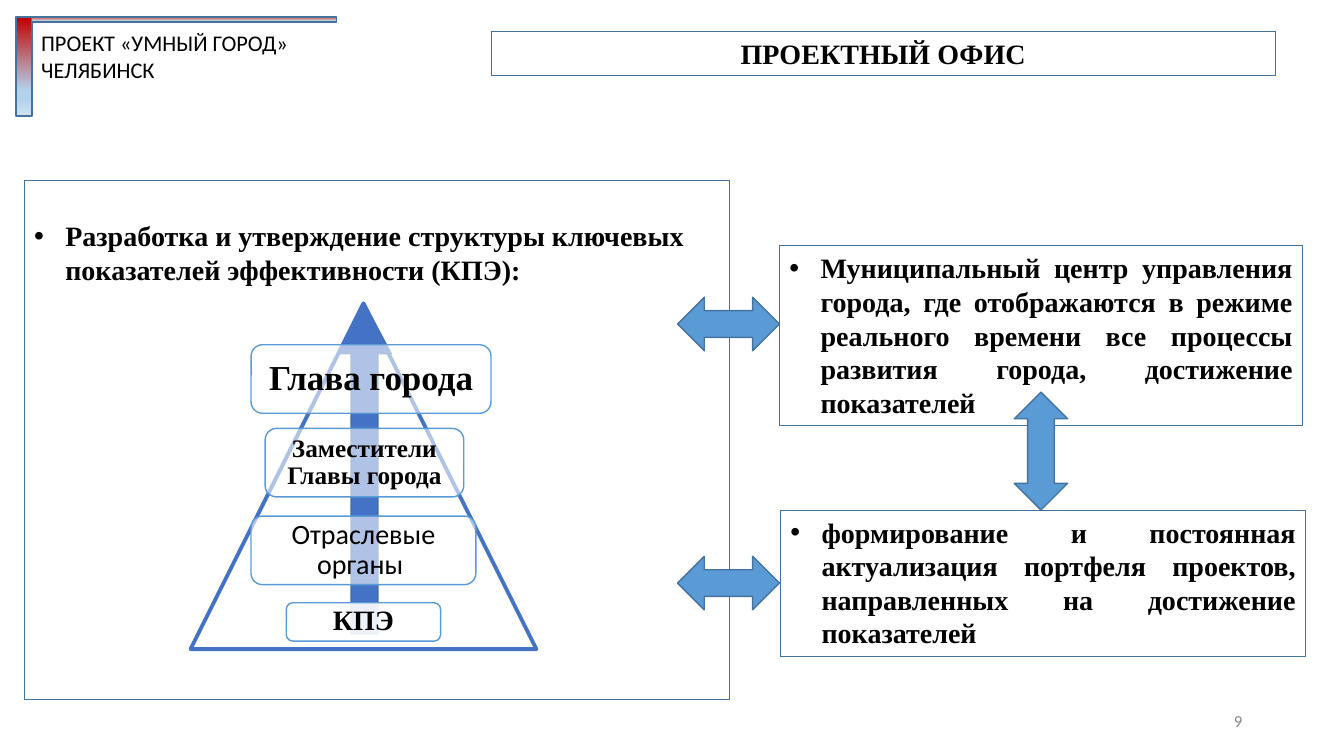
from lxml import etree
from pptx import Presentation
from pptx.dml.color import RGBColor
from pptx.enum.shapes import MSO_SHAPE
from pptx.enum.text import MSO_ANCHOR, MSO_AUTO_SIZE, PP_ALIGN
from pptx.oxml.ns import qn
from pptx.util import Inches, Pt

RECTANGLE, ROUNDED = MSO_SHAPE.RECTANGLE, MSO_SHAPE.ROUNDED_RECTANGLE
TRIANGLE, DOWN_ARROW = MSO_SHAPE.ISOSCELES_TRIANGLE, MSO_SHAPE.DOWN_ARROW
HORIZONTAL_ARROW, VERTICAL_ARROW = MSO_SHAPE.LEFT_RIGHT_ARROW, MSO_SHAPE.UP_DOWN_ARROW
TOP, MIDDLE = MSO_ANCHOR.TOP, MSO_ANCHOR.MIDDLE
LEFT, CENTER, RIGHT, JUSTIFY = PP_ALIGN.LEFT, PP_ALIGN.CENTER, PP_ALIGN.RIGHT, PP_ALIGN.JUSTIFY
NO_AUTOFIT = MSO_AUTO_SIZE.NONE

COLORS = {
    "text": "000000", "muted": "898989", "white": "FFFFFF",
    "outline": "43739E", "pyramid": "4472C4", "arrow": "5B9BD5",
    "red": "C00000", "orange": "E95225", "sky": "B5D2EC", "pale": "CEE1F2",
}
SERIF, SANS = "Times New Roman", "Calibri"


class SlideBuilder:
    """Draws styled elements on the current slide."""

    def __init__(self, presentation):
        self.slide = presentation.slides.add_slide(presentation.slide_layouts[5])

    def color(self, name):
        return RGBColor.from_string(COLORS[name])

    def shape(self, kind, box, fill=None, line="outline", width=1, opacity=None):
        shape = self.slide.shapes.add_shape(kind, *map(Inches, box))
        shape.shadow.inherit = False
        self.paint(shape, fill, line, width)
        if opacity:
            color = shape._element.spPr.find(qn("a:solidFill"))[0]
            etree.SubElement(color, qn("a:alpha"), val=str(opacity * 1000))
        return shape

    def paint(self, shape, fill, line, width):
        if fill:
            shape.fill.solid()
            shape.fill.fore_color.rgb = self.color(fill)
        else:
            shape.fill.background()
        shape.line.color.rgb = self.color(line)
        shape.line.width = Pt(width)

    def gradient_bar(self, box, start):
        shape = self.shape(RECTANGLE, box)
        shape.fill.gradient()
        gradient = shape._element.spPr.find(qn("a:gradFill"))
        stops = gradient.find(qn("a:gsLst"))
        for stop in list(stops):
            stops.remove(stop)
        for position, name in ((0, start), (74, "sky"), (83, "sky"), (100, "pale")):
            stop = etree.SubElement(stops, qn("a:gs"), pos=str(position * 1000))
            etree.SubElement(stop, qn("a:srgbClr"), val=COLORS[name])
        gradient.find(qn("a:lin")).set("ang", "5400000")

    def set_text(self, shape, lines, size=20, font=SERIF, bold=True, align=LEFT,
                 anchor=TOP, color="text", insets=(0.1, 0.05, 0.1, 0.05), spacing=1.0):
        frame = shape.text_frame
        frame.word_wrap = True
        frame.auto_size = NO_AUTOFIT
        frame.vertical_anchor = anchor
        (frame.margin_left, frame.margin_top,
         frame.margin_right, frame.margin_bottom) = map(Inches, insets)
        frame.text = "\n".join(lines)
        for paragraph in frame.paragraphs:
            paragraph.alignment = align
            paragraph.line_spacing = spacing
            paragraph.font.size = Pt(size)
            paragraph.font.name = font
            paragraph.font.bold = bold
            paragraph.font.color.rgb = self.color(color)

    def title(self, text, box):
        title = self.slide.shapes.title
        title.left, title.top, title.width, title.height = map(Inches, box)
        self.paint(title, None, "outline", 0.75)
        self.set_text(title, [text], align=CENTER)

    def label(self, lines, box, **style):
        shape = self.slide.shapes.add_textbox(*map(Inches, box))
        self.set_text(shape, lines, font=SANS, bold=False, **style)

    def bullet_box(self, text, box, align=JUSTIFY, top_inset=0.05):
        shape = self.shape(RECTANGLE, box, width=0.75)
        self.set_text(shape, [text], align=align, insets=(0.1, top_inset, 0.1, 0.05))
        properties = shape.text_frame.paragraphs[0]._p.get_or_add_pPr()
        properties.set("marL", str(Inches(0.31)))
        properties.set("indent", str(-Inches(0.31)))
        bullet_font = etree.Element(qn("a:buFont"), typeface="Arial")
        bullet = etree.Element(qn("a:buChar"), char="•")
        spacing = properties.find(qn("a:lnSpc"))
        spacing.addnext(bullet_font)
        bullet_font.addnext(bullet)

    def card(self, text, box, size, font=SERIF, bold=True, opacity=58):
        shape = self.shape(ROUNDED, box, "white", "arrow", opacity=opacity)
        self.set_text(shape, [text], size, font, bold, CENTER, MIDDLE,
                      insets=(0.08,) * 4, spacing=0.9)


def main():
    presentation = Presentation()
    presentation.slide_width, presentation.slide_height = Inches(13.33), Inches(7.5)
    builder = SlideBuilder(presentation)

    builder.title("ПРОЕКТНЫЙ ОФИС", (4.87, 0.31, 7.78, 0.44))

    stem = builder.shape(DOWN_ARROW, (3.35, 3.01, 0.53, 3.28), "pyramid")
    stem.rotation = 180
    stem.adjustments[0], stem.adjustments[1] = 0.5, 0.94

    builder.gradient_bar((0.16, 0.17, 0.16, 0.98), "red")
    builder.gradient_bar((0.31, 0.17, 3.03, 0.05), "orange")
    builder.label(["ПРОЕКТ «УМНЫЙ ГОРОД»", "ЧЕЛЯБИНСК"], (0.31, 0.24, 3.29, 0.64), size=16)

    builder.bullet_box(
        "Разработка и утверждение структуры ключевых показателей эффективности (КПЭ):",
        (0.24, 1.79, 7, 5.15), LEFT, 0.38)
    builder.shape(TRIANGLE, (1.89, 3.01, 3.43, 3.43), line="pyramid", width=2.75)
    builder.card("Отраслевые органы ", (2.49, 5.12, 2.23, 0.68), 20, SANS, False)
    builder.card("Глава города", (2.49, 3.42, 2.38, 0.68), 25)
    builder.card("Заместители Главы города", (2.63, 4.25, 1.97, 0.68), 18)
    builder.card("КПЭ", (2.84, 5.98, 1.53, 0.38), 20, opacity=90)

    builder.bullet_box(
        "Муниципальный центр управления города, где отображаются в режиме "
        "реального времени все процессы развития города, достижение показателей",
        (7.73, 2.44, 5.19, 1.78))
    builder.bullet_box(
        "формирование и постоянная актуализация портфеля проектов, "
        "направленных на достижение показателей",
        (7.74, 5.06, 5.21, 1.45))

    for top in (2.95, 5.52):
        builder.shape(HORIZONTAL_ARROW, (6.72, top, 1.01, 0.53), "arrow")
    builder.shape(VERTICAL_ARROW, (10.06, 3.89, 0.53, 1.17), "arrow")
    builder.label(["9"], (9.42, 6.95, 3, 0.4), size=12, align=RIGHT,
                  anchor=MIDDLE, color="muted")

    presentation.save("out.pptx")


if __name__ == "__main__":
    main()
